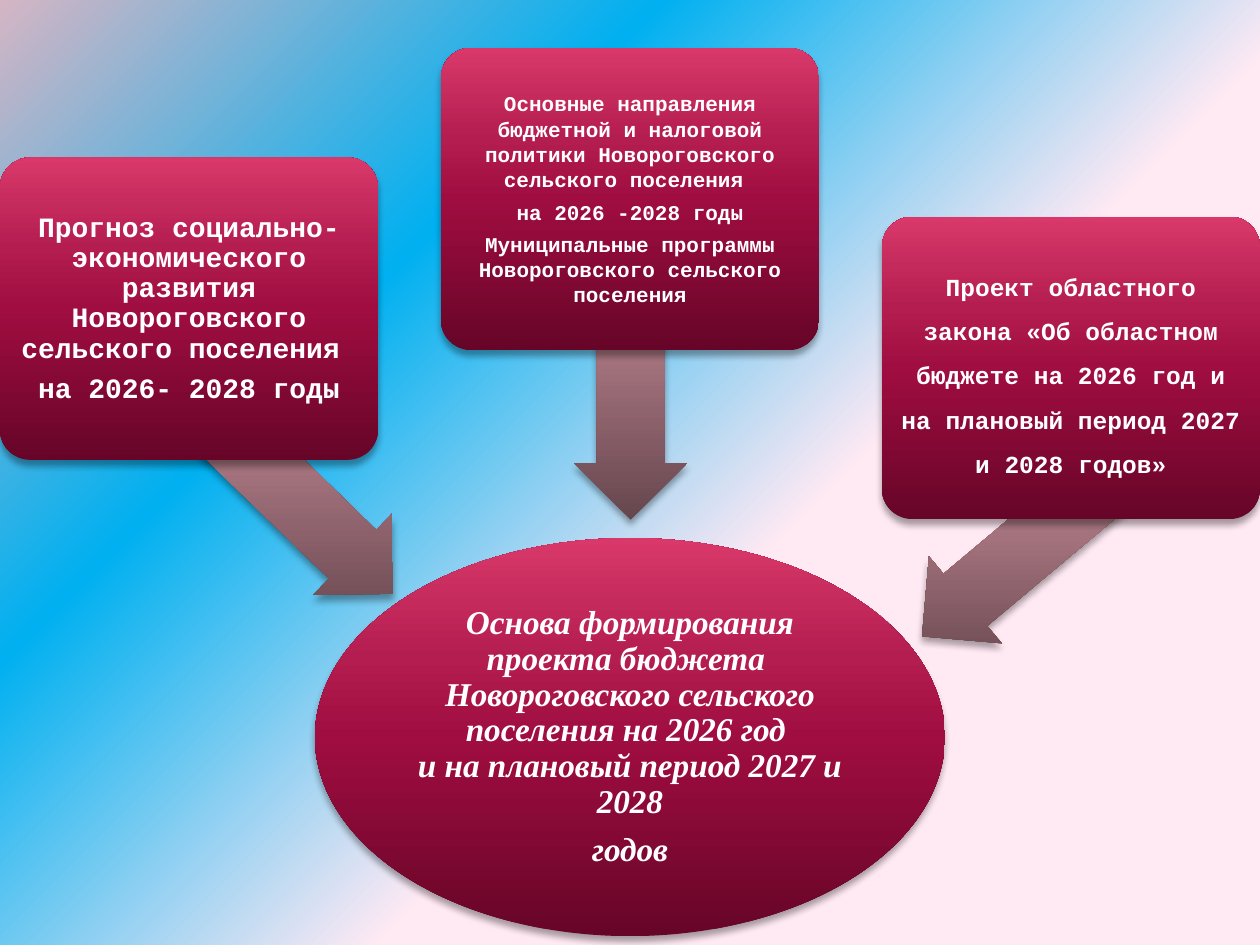
"""Build the slide showing what the settlement budget draft is based on."""
import lxml.etree
import pptx
import pptx.dml.color
import pptx.enum.shapes
import pptx.enum.text
import pptx.oxml
import pptx.oxml.ns
import pptx.util

Pt = pptx.util.Pt
SHAPES = pptx.enum.shapes.MSO_SHAPE
COLORS = {
    "white": "FFFFFF", "black": "000000",
    "pale pink": "FFE9F3", "sky": "00B0F0", "dusty pink": "D5B5C4",
    "wine": "660527", "crimson": "A00D40", "raspberry": "B41D50", "rose": "D8396A",
    "umber": "66464D", "mauve": "A3727D", "blush": "BD8995", "light blush": "E5A9B7",
}
BACKGROUND = [(40, "pale pink"), (70, "sky"), (100, "dusty pink")]
PANEL = [(0, "wine"), (50, "crimson"), (70, "raspberry"), (100, "rose")]
ARROW = [(0, "umber"), (50, "mauve"), (70, "blush"), (100, "light blush")]
CORNER = ('<a:path path="circle"><a:fillToRect l="100000" t="100000"/></a:path>'
          '<a:tileRect r="-100000" b="-100000"/>')
UPWARD = '<a:lin ang="16200000" scaled="0"/>'

BOX_SIZE = (216, 172.8)
ARROW_HEIGHT = 64.8
RESULT = {
    "box": (180, 307.44, 360, 227.52),
    "text": ["Основа формирования проекта бюджета \vНовороговского сельского поселения "
             "на 2026 год \vи на плановый период 2027 и 2028", " годов "],
    "font": "Times New Roman", "size": 19, "italic": True, "spacing": 0.9, "inset": 0.95,
}
SOURCES = [
    {"corner": (0, 90), "arrow": (50.4, 236.16, 203.04), "rotation": 224.2,
     "size": 16, "spacing": 0.9,
     "text": ["Прогноз социально- экономического развития Новороговского "
              "сельского поселения ", "на 2026- 2028 годы"]},
    {"corner": (252, 27.36), "arrow": (268.56, 172.8, 183.6), "rotation": 270,
     "size": 12, "spacing": 1.0,
     "text": ["Основные направления бюджетной и налоговой политики Новороговского "
              "сельского поселения ", "на 2026 -2028 годы",
              "Муниципальные программы Новороговского сельского поселения"]},
    {"corner": (504, 123.84), "arrow": (506.16, 274.32, 177.12), "rotation": 320,
     "size": 14, "spacing": 1.5,
     "text": ["Проект областного закона «Об областном бюджете на 2026 год "
              "и на плановый период 2027 и 2028 годов»"]},
]


def parse_drawing(tag, attributes, content):
    namespace = pptx.oxml.ns.nsdecls("a")
    return pptx.oxml.parse_xml(f"<a:{tag} {namespace} {attributes}>{content}</a:{tag}>")


def set_gradient(fill, owner, stops, direction):
    fill.gradient()
    gradient = owner.find(".//" + pptx.oxml.ns.qn("a:gradFill"))
    stop_list = "".join(
        f'<a:gs pos="{position * 1000}"><a:srgbClr val="{COLORS[name]}"/></a:gs>'
        for position, name in stops)
    content = f"<a:gsLst>{stop_list}</a:gsLst>{direction}"
    gradient.getparent().replace(
        gradient, parse_drawing("gradFill", 'rotWithShape="0"', content))


def add_shaded_shape(slide, preset, box, stops):
    shape = slide.shapes.add_shape(preset, *map(Pt, box))
    set_gradient(shape.fill, shape._element.spPr, stops, UPWARD)
    shape.line.fill.background()
    shape.shadow.inherit = False
    effects = shape._element.spPr.find(pptx.oxml.ns.qn("a:effectLst"))
    attributes = (f'blurRad="{Pt(4)}" dist="{Pt(3)}" dir="5400000" '
                  'algn="ctr" rotWithShape="0"')
    color = f'<a:srgbClr val="{COLORS["black"]}"><a:alpha val="35000"/></a:srgbClr>'
    effects.append(parse_drawing("outerShdw", attributes, color))
    return shape


def write_text(shape, item):
    frame = shape.text_frame
    frame.word_wrap = True
    frame.vertical_anchor = pptx.enum.text.MSO_ANCHOR.MIDDLE
    inset = Pt(item.get("inset", 2.4))
    frame.margin_left = frame.margin_right = inset
    frame.margin_top = frame.margin_bottom = inset
    for index, text in enumerate(item["text"]):
        paragraph = frame.add_paragraph() if index else frame.paragraphs[0]
        paragraph.text = text
        paragraph.alignment = pptx.enum.text.PP_ALIGN.CENTER
        paragraph.line_spacing = item["spacing"]
        paragraph.space_after = Pt(0.35 * item["size"])
        for run in paragraph.runs:
            run.font.name = item.get("font", "Courier New")
            run.font.size = Pt(item["size"])
            run.font.bold = True
            run.font.italic = item.get("italic", False)
            run.font.color.rgb = pptx.dml.color.RGBColor.from_string(COLORS["white"])


def main():
    presentation = pptx.Presentation()
    presentation.slide_width, presentation.slide_height = Pt(720), Pt(540)
    slide = presentation.slides.add_slide(presentation.slide_layouts[6])
    set_gradient(slide.background.fill, slide._element, BACKGROUND, CORNER)

    ellipse = add_shaded_shape(slide, SHAPES.OVAL, RESULT["box"], PANEL)
    write_text(ellipse, RESULT)
    for source in SOURCES:
        arrow = add_shaded_shape(
            slide, SHAPES.LEFT_ARROW, (*source["arrow"], ARROW_HEIGHT), ARROW)
        arrow.adjustments[0], arrow.adjustments[1] = 0.6, 0.5
        arrow.rotation = source["rotation"]
        panel = add_shaded_shape(
            slide, SHAPES.ROUNDED_RECTANGLE, (*source["corner"], *BOX_SIZE), PANEL)
        panel.adjustments[0] = 0.1
        write_text(panel, source)
    presentation.save("out.pptx")


if __name__ == "__main__":
    main()
